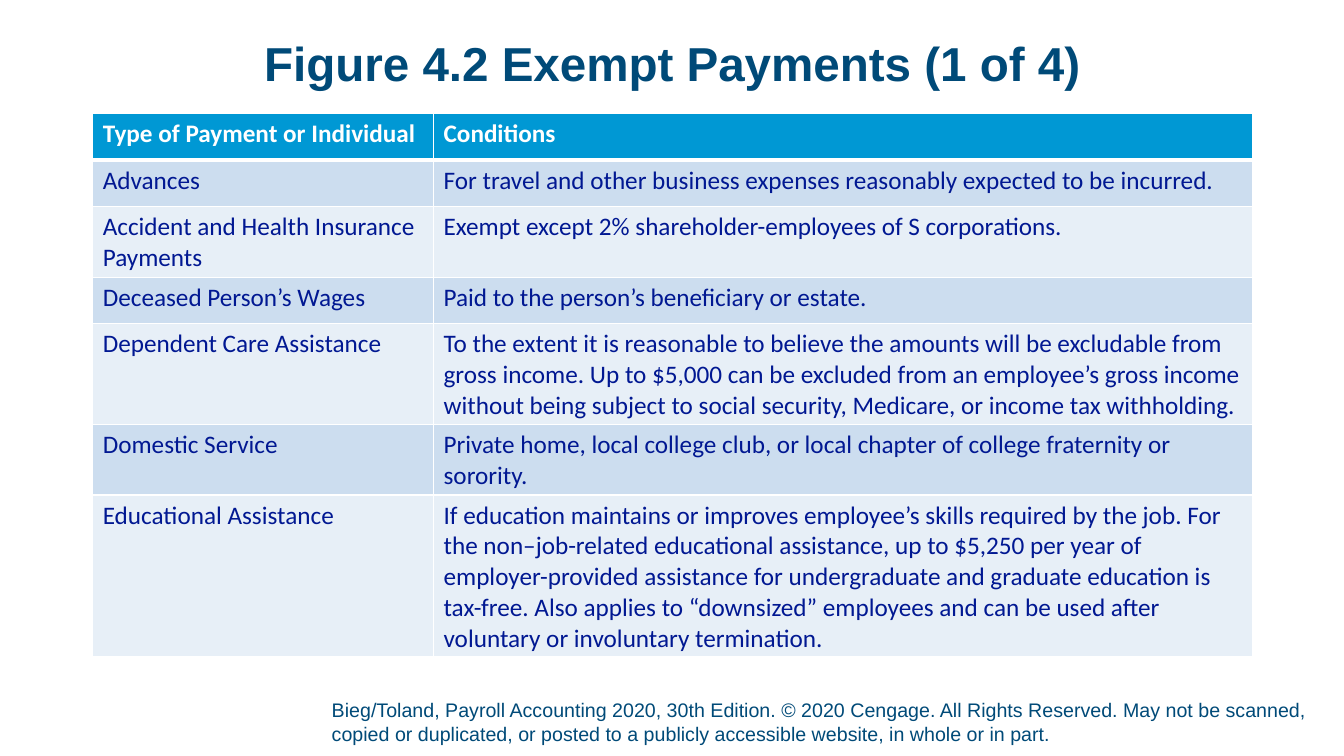
from lxml import etree
from pptx import Presentation
from pptx.dml.color import RGBColor
from pptx.enum.text import MSO_ANCHOR as Anchor, PP_ALIGN as Align
from pptx.oxml.ns import qn
from pptx.util import Emu, Pt

EMU_PER_PX = 9144  # 100 px to the inch
NAVY, INK, WHITE = "004A78", "011892", "FFFFFF"
HEADER_FILL, BAND_FILLS = "0098D4", ("CCDDEF", "E7EFF7")


def px(length):
    return Emu(length * EMU_PER_PX)


def add_span(para, text, font, size, color, bold=False):
    span = para.add_run()
    span.text = text
    span.font.name = font
    span.font.size = Pt(size)
    span.font.bold = bold
    span.font.color.rgb = RGBColor.from_string(color)


deck = Presentation()
deck.slide_width, deck.slide_height = px(1333), px(750)
page = deck.slides.add_slide(deck.slide_layouts[6])

# Title and copyright line
texts = [
    ("Figure 4.2 Exempt Payments (1 of 4)",
     (92, 40, 1150, 74), 34, True, Align.CENTER, Anchor.TOP, 0.9, 0),
    ("Bieg/Toland, Payroll Accounting 2020, 30th Edition. © 2020 Cengage. "
     "All Rights Reserved. May not be scanned, copied or duplicated, or posted "
     "to a publicly accessible website, in whole or in part.",
     (329, 692, 979, 52), 14, False, Align.LEFT, Anchor.BOTTOM, 1.0, 5),
]
for text, place, size, bold, align, anchor, spacing, inset_bottom in texts:
    box = page.shapes.add_textbox(*map(px, place))
    frame = box.text_frame
    frame.word_wrap = True
    frame.vertical_anchor = anchor
    frame.margin_left = frame.margin_top = frame.margin_right = 0
    frame.margin_bottom = px(inset_bottom)
    para = frame.paragraphs[0]
    para.alignment = align
    para.line_spacing = spacing
    add_span(para, text, "Arial", size, NAVY, bold)

# Table of exempt payments
payments = [
    ("Type of Payment or Individual", "Conditions"),
    ("Advances",
     "For travel and other business expenses reasonably expected to be incurred."),
    ("Accident and Health Insurance Payments",
     "Exempt except 2% shareholder-employees of S corporations."),
    ("Deceased Person’s Wages", "Paid to the person’s beneficiary or estate."),
    ("Dependent Care Assistance",
     "To the extent it is reasonable to believe the amounts will be excludable "
     "from gross income. Up to $5,000 can be excluded from an employee’s gross "
     "income without being subject to social security, Medicare, or income tax "
     "withholding."),
    ("Domestic Service",
     "Private home, local college club, or local chapter of college fraternity "
     "or sorority."),
    ("Educational Assistance",
     "If education maintains or improves employee’s skills required by the job. "
     "For the non–job-related educational assistance, up to $5,250 per year of "
     "employer-provided assistance for undergraduate and graduate education is "
     "tax-free. Also applies to “downsized” employees and can be used after "
     "voluntary or involuntary termination."),
]
row_height = 46
table = page.shapes.add_table(len(payments), 2, px(92), px(113), px(1150),
                              px(row_height * len(payments))).table
for column, width in zip(table.columns, (338, 812)):
    column.width = px(width)

for row, entries in enumerate(payments):
    header = row == 0
    fill = HEADER_FILL if header else BAND_FILLS[(row - 1) % 2]
    borders = {"lnL": 1, "lnR": 1, "lnT": 3 if row == 1 else 1,
               "lnB": 3 if header else 1}
    for col, text in enumerate(entries):
        cell = table.cell(row, col)
        cell.fill.solid()
        cell.fill.fore_color.rgb = RGBColor.from_string(fill)
        add_span(cell.text_frame.paragraphs[0], text, "Calibri", 18,
                 WHITE if header else INK, header)
        properties = cell._tc.get_or_add_tcPr()
        for index, (side, points) in enumerate(borders.items()):
            line = etree.Element(qn(f"a:{side}"), w=str(Pt(points)))
            paint = etree.SubElement(line, qn("a:solidFill"))
            etree.SubElement(paint, qn("a:srgbClr"), val=WHITE)
            properties.insert(index, line)

deck.save("out.pptx")
